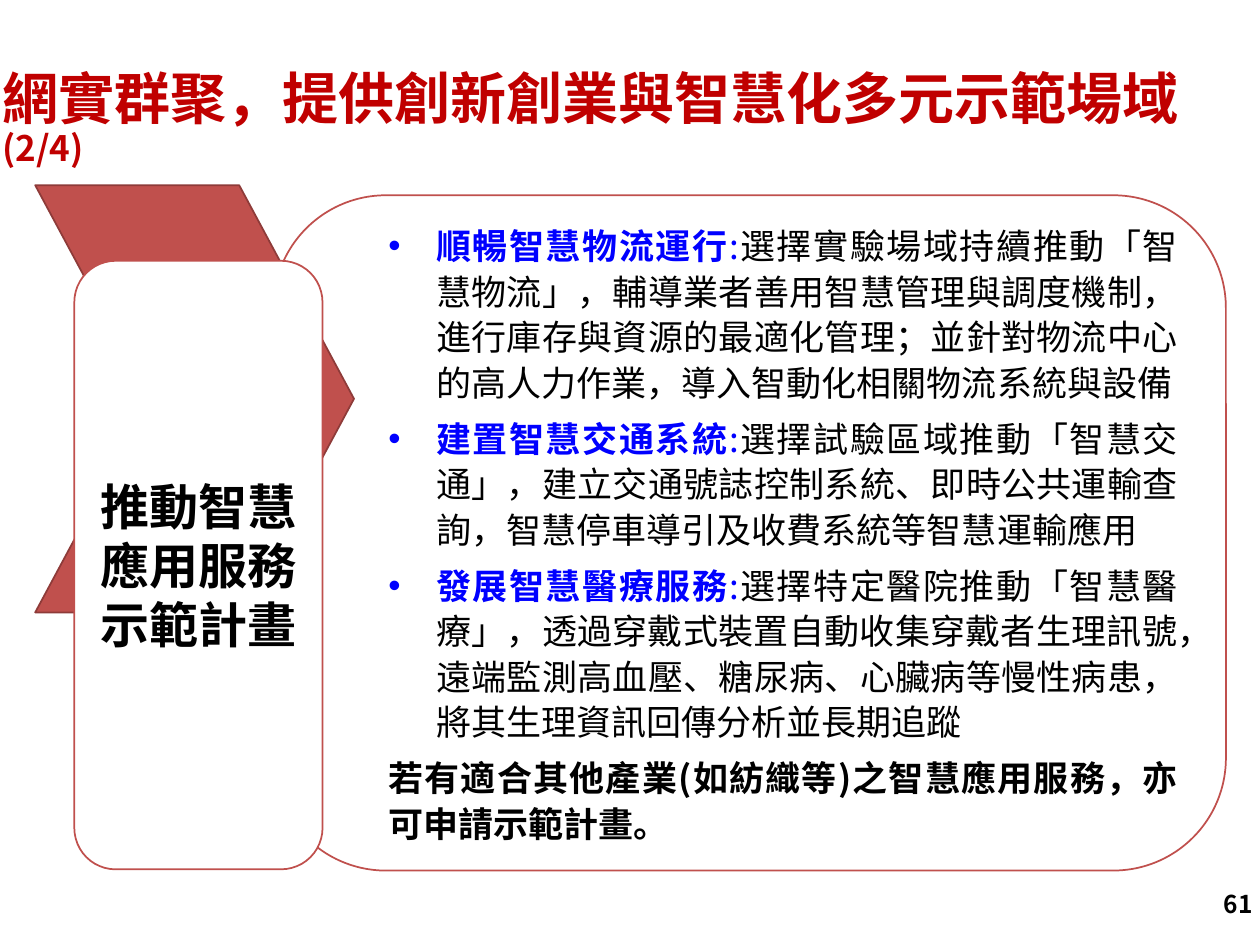
from dataclasses import dataclass

from lxml import etree
from pptx import Presentation
from pptx.dml.color import RGBColor
from pptx.enum import shapes, text
from pptx.oxml import ns
from pptx.util import Inches, Pt

SANS = "Noto Sans CJK SC"
MONO = "Noto Sans Mono"
WHITE = RGBColor(0xFF, 0xFF, 0xFF)
BLACK = RGBColor(0, 0, 0)
BLUE = RGBColor(0, 0, 0xFF)
RED = RGBColor(0xC0, 0x50, 0x4D)
DARK_RED = RGBColor(0x8E, 0x3B, 0x39)
TITLE_RED = RGBColor(0xC0, 0, 0)


@dataclass
class Area:
    left: float
    top: float
    width: float
    height: float

    def lengths(self):
        return [Inches(n) for n in (self.left, self.top, self.width, self.height)]


@dataclass
class Span:
    words: str
    color: RGBColor = BLACK
    bold: bool = False


@dataclass
class Point:
    spans: list[Span]
    bulleted: bool = True


def service(name: str, detail: str) -> Point:
    return Point([Span(name, BLUE, True), Span(":", BLUE), Span(detail)])


POINTS = [
    service("順暢智慧物流運行", "選擇實驗場域持續推動「智慧物流」，輔導業者善用智慧管理與調度機制，"
            "進行庫存與資源的最適化管理；並針對物流中心的高人力作業，導入智動化相關物流系統與設備"),
    service("建置智慧交通系統", "選擇試驗區域推動「智慧交通」，建立交通號誌控制系統、即時公共運輸查詢，"
            "智慧停車導引及收費系統等智慧運輸應用"),
    service("發展智慧醫療服務", "選擇特定醫院推動「智慧醫療」，透過穿戴式裝置自動收集穿戴者生理訊號，"
            "遠端監測高血壓、糖尿病、心臟病等慢性病患，將其生理資訊回傳分析並長期追蹤"),
    Point([Span("若有適合其他產業(如紡織等)之智慧應用服務，亦可申請示範計畫。", bold=True)], False),
]


def add_panel(page, kind, area: Area, fill: RGBColor, line: RGBColor):
    panel = page.shapes.add_shape(kind, *area.lengths())
    panel.shadow.inherit = False
    panel.fill.solid()
    panel.fill.fore_color.rgb = fill
    panel.line.color.rgb = line
    panel.line.width = Pt(1)
    return panel


def set_frame(box, left: float, right: float, vertical: float):
    frame = box.text_frame
    frame.word_wrap = True
    frame.vertical_anchor = text.MSO_ANCHOR.MIDDLE
    frame.margin_left, frame.margin_right = Inches(left), Inches(right)
    frame.margin_top = frame.margin_bottom = Inches(vertical)
    return frame


def add_span(para, span: Span, size: float, face: str) -> None:
    run = para.add_run()
    run.text = span.words
    run.font.size = Pt(size)
    run.font.bold = span.bold
    run.font.color.rgb = span.color
    run.font.name = face
    etree.SubElement(run.font._element, ns.qn("a:ea"), typeface=face)


def add_point(para, point: Point, first: bool) -> None:
    margin, indent = (0.79, -0.38) if point.bulleted else (0.41, 0)
    properties = para._p.get_or_add_pPr()
    properties.set("marL", str(Inches(margin)))
    properties.set("indent", str(Inches(indent)))
    if point.bulleted:
        etree.SubElement(properties, ns.qn("a:buFont"), typeface="Arial")
        etree.SubElement(properties, ns.qn("a:buChar"), char="•")
    para.level = 1
    para.alignment = text.PP_ALIGN.JUSTIFY
    para.line_spacing = Pt(26)
    para.space_before = Pt(0 if first else 6)
    for span in point.spans:
        add_span(para, span, 20, SANS)


def add_label(page, area: Area, align):
    box = page.shapes.add_textbox(*area.lengths())
    para = set_frame(box, 0.1, 0.1, 0.05).paragraphs[0]
    para.alignment = align
    return para


def main() -> None:
    deck = Presentation()
    deck.slide_width, deck.slide_height = Inches(10), Inches(7.5)
    page = deck.slides.add_slide(deck.slide_layouts[6])
    kinds = shapes.MSO_SHAPE

    details = add_panel(page, kinds.ROUNDED_RECTANGLE, Area(2.17, 1.55, 7.56, 5.36), WHITE, RED)
    frame = set_frame(details, 0.24, 0.12, 0)
    for index, point in enumerate(POINTS):
        para = frame.add_paragraph() if index else frame.paragraphs[0]
        add_point(para, point, index == 0)

    arrow = add_panel(page, kinds.CHEVRON, Area(0.28, 1.47, 2.53, 3.39), RED, DARK_RED)
    arrow.adjustments[0] = 0.36

    plan = add_panel(page, kinds.ROUNDED_RECTANGLE, Area(0.59, 2.07, 1.97, 4.83), WHITE, RED)
    para = set_frame(plan, 0, 0, 0).paragraphs[0]
    para.alignment = text.PP_ALIGN.CENTER
    add_span(para, Span("推動智慧應用服務示範計畫", bold=True), 28, MONO)

    number = add_label(page, Area(7.71, 6.97, 2.33, 0.4), text.PP_ALIGN.RIGHT)
    add_span(number, Span("61", bold=True), 14, SANS)

    title = add_label(page, Area(-0.08, 0.43, 10.15, 1.05), text.PP_ALIGN.LEFT)
    title.line_spacing = 0.9
    add_span(title, Span("網實群聚，提供創新創業與智慧化多元示範場域", TITLE_RED, True), 32, SANS)
    add_span(title, Span("(2/4)", TITLE_RED, True), 20, SANS)

    deck.save("out.pptx")


if __name__ == "__main__":
    main()
